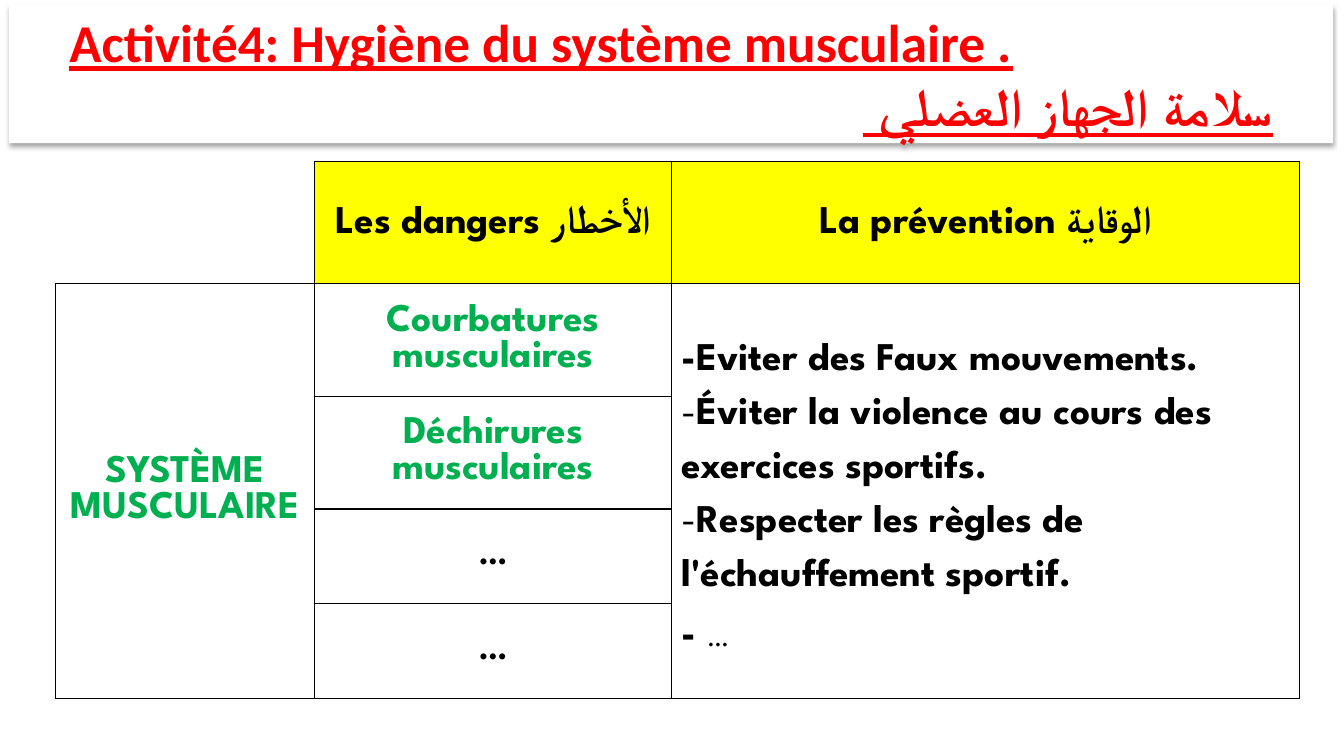
"""Build a slide on looking after the muscular system: a title box above a table."""
from lxml import etree
from pptx import Presentation, util as u
from pptx.dml.color import RGBColor
from pptx.enum import shapes, text
from pptx.oxml import parse_xml
from pptx.oxml.ns import nsdecls

RED, GREEN, BLACK, YELLOW, WHITE = "FF0000", "00B050", "000000", "FFFF00", "FFFFFF"
CENTER, LEFT, RIGHT = text.PP_ALIGN.CENTER, text.PP_ALIGN.LEFT, text.PP_ALIGN.RIGHT


def paint(target, color):
    target.solid()
    target.fore_color.rgb = RGBColor.from_string(color)


def write(paragraph, runs, base):
    for words, changes in runs:
        if words == "\n":
            paragraph.add_line_break()
            continue
        run = paragraph.add_run()
        run.text = words
        look = {**base, **changes}
        paint(run.font.fill, look.pop("color"))
        for name, value in look.items():
            setattr(run.font, name, value)


deck = Presentation()
deck.slide_width, deck.slide_height = u.Inches(13.33), u.Inches(7.5)
slide = deck.slides.add_slide(deck.slide_layouts[6])

columns = [2.57, 3.54, 6.23]
rows = [1.21, 1.12, 1.12, 0.94, 0.94]
frame = slide.shapes.add_table(len(rows), len(columns), u.Inches(0.55), u.Inches(1.6),
                               u.Inches(sum(columns)), u.Inches(sum(rows)))
hygiene = frame.table
for column, width in zip(hygiene.columns, columns):
    column.width = u.Inches(width)
for row, height in zip(hygiene.rows, rows):
    row.height = u.Inches(height)
for column in (0, 2):
    hygiene.cell(1, column).merge(hygiene.cell(4, column))

body = {"size": u.Pt(28), "name": "League Spartan", "bold": True, "color": BLACK}
green, plain = {"color": GREEN}, {"bold": False}
dots = [[("…", {"size": u.Pt(24)})]]
prevention = [
    [("-Eviter des Faux mouvements.", {}), ("\n", {}),
     ("-", plain), ("Éviter la violence au cours des exercices sportifs.", {}), ("\n", {}),
     ("-", plain), ("Respecter les règles de l'échauffement sportif.", {})],
    [("-", {}), (" ", {"size": u.Pt(32), "bold": False}),
     ("…", {"size": u.Pt(20), "bold": False})],
]
contents = {
    (0, 1): [[("Les dangers الأخطار", {})]],
    (0, 2): [[("La prévention الوقاية", {})]],
    (1, 0): [[("SYSTÈME MUSCULAIRE", green)]],
    (1, 1): [[("Courbatures musculaires", green)]],
    (1, 2): prevention,
    (2, 1): [[("Déchirures musculaires", green)]],
    (3, 1): dots,
    (4, 1): dots,
}

for r in range(len(rows)):
    for c in range(len(columns)):
        cell = hygiene.cell(r, c)
        cell.vertical_anchor = text.MSO_ANCHOR.MIDDLE
        paint(cell.fill, YELLOW if r == 0 and c > 0 else WHITE)
        for place, side in enumerate("LRTB"):
            hidden = (r, c) == (0, 0) and side in "LT"
            stroke = "<a:noFill/>" if hidden else (
                f'<a:solidFill><a:srgbClr val="{BLACK}"/></a:solidFill>')
            cell._tc.get_or_add_tcPr().insert(place, parse_xml(
                f'<a:ln{side} {nsdecls("a")} w="12700">{stroke}</a:ln{side}>'))
        for number, runs in enumerate(contents.get((r, c), [])):
            paragraphs = cell.text_frame
            paragraph = paragraphs.add_paragraph() if number else paragraphs.paragraphs[0]
            paragraph.alignment = LEFT if (r, c) == (1, 2) else CENTER
            if (r, c) == (1, 2):
                paragraph.line_spacing = 1.5
            write(paragraph, runs, body)

title = slide.shapes.add_shape(shapes.MSO_SHAPE.RECTANGLE, u.Inches(0.09), u.Inches(0.04),
                               u.Inches(13.13), u.Inches(1.38))
paint(title.fill, WHITE)
title.line.fill.background()
title.shadow.inherit = False
effects = title._element.spPr.find("{*}effectLst")
effects.append(parse_xml(
    f'<a:outerShdw {nsdecls("a")} blurRad="{u.Pt(3.5)}" dist="{u.Pt(2.2)}" dir="5400000" '
    f'rotWithShape="0"><a:srgbClr val="{BLACK}"><a:alpha val="32000"/></a:srgbClr>'
    '</a:outerShdw>'))
heading = title.text_frame
heading.word_wrap = True
heading.auto_size = text.MSO_AUTO_SIZE.SHAPE_TO_FIT_TEXT
heading_look = {"size": u.Pt(38), "name": "Calibri", "bold": True, "underline": True, "color": RED}
headings = [("Activité4: Hygiène du système musculaire .", LEFT, "0"),
            ("سلامة الجهاز العضلي ", RIGHT, "1")]
for number, (words, side, right_to_left) in enumerate(headings):
    paragraph = heading.add_paragraph() if number else heading.paragraphs[0]
    paragraph.alignment, paragraph.level = side, 1
    layout = {"marL": str(u.Inches(0.5)), "indent": "0", "rtl": right_to_left}
    for name, value in layout.items():
        paragraph._p.get_or_add_pPr().set(name, value)
    write(paragraph, [(words, {})], heading_look)
    outline = parse_xml(
        f'<a:ln {nsdecls("a")} w="{u.Pt(0.75)}"><a:solidFill><a:srgbClr val="{BLACK}">'
        '<a:alpha val="47000"/></a:srgbClr></a:solidFill><a:prstDash val="solid"/></a:ln>')
    paragraph.runs[0]._r.get_or_add_rPr().insert(0, outline)

deck.save("out.pptx")
